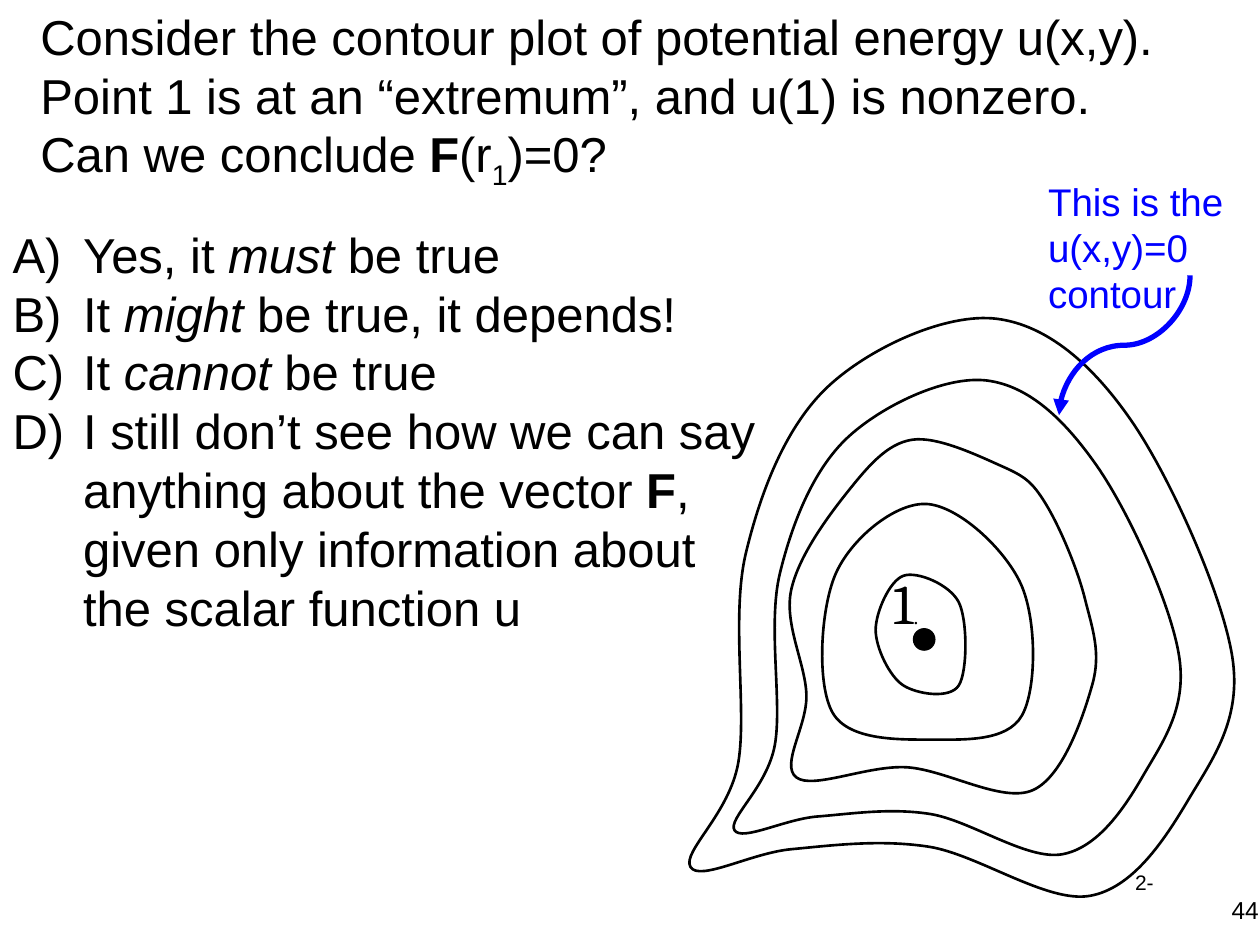
"""Build a quiz slide about a contour plot of potential energy."""
from lxml import etree
from pptx import Presentation
from pptx.dml.color import RGBColor
from pptx.enum.shapes import MSO_CONNECTOR, MSO_SHAPE
from pptx.enum.text import MSO_ANCHOR, MSO_AUTO_SIZE, PP_ALIGN
from pptx.oxml.ns import qn
from pptx.util import Cm, Pt

CURVE = MSO_CONNECTOR.CURVE
OVAL = MSO_SHAPE.OVAL
TOP = MSO_ANCHOR.TOP
FIXED = MSO_AUTO_SIZE.NONE
LEFT, RIGHT = PP_ALIGN.LEFT, PP_ALIGN.RIGHT

HUES = {"ink": "000000", "paper": "FFFFFF", "note": "0000FF"}
INCH = 2.54

ASK = [
    [("Consider the contour plot of potential energy u(x,y).", "")],
    [("Point 1 is at an “extremum”, and u(1) is nonzero.\nCan we conclude ", ""),
     ("F", "bold"), ("(r", ""), ("1", "sub"), (")=0?", "")],
]
CHOICES = [
    [("Yes, it ", ""), ("must", "slant"), (" be true", "")],
    [("It ", ""), ("might", "slant"), (" be true, it depends!", "")],
    [("It ", ""), ("cannot", "slant"), (" be true", "")],
    [("I still don’t see how we can say\nanything about the vector ", ""), ("F", "bold"),
     (",\ngiven only information about\nthe scalar function u", "")],
]
BOXES = [
    ((8.91, 6.85, 0.48, 0.3), [[("2-", "")]], 12, "Arial", "ink", LEFT),
    ((7.76, 7.05, 2.33, 0.52), [[("44", "")]], 14, "Arial", "ink", RIGHT),
    ((6.99, 4.46, 0.56, 0.67), [[("1", ""), (".", "dot")]], 32, "Cambria", "ink", LEFT),
    ((8.22, 1.36, 1.67, 1.21), [[("This is the u(x,y)=0 contour", "")]], 22, "Arial", "note", LEFT),
]
# Each ring is a smooth closed curve through points in hundredths of an inch
OUTER = [(592, 439), (586, 605), (548, 688), (628, 674), (737, 672), (865, 711),
         (943, 635), (978, 521), (898, 334), (791, 253), (657, 307)]
RINGS = [
    (None, OUTER),
    ("paper", [(round(0.82 * x + 134), round(0.82 * y + 95)) for x, y in OUTER]),
    ("paper", [(628, 468), (640, 551), (632, 617), (720, 609), (820, 627), (867, 543),
               (861, 475), (830, 400), (795, 370), (724, 349), (673, 390)]),
    ("paper", [(663, 456), (661, 566), (739, 587), (811, 568), (810, 463), (735, 400)]),
    ("paper", [(717, 457), (695, 500), (717, 544), (761, 544), (761, 478)]),
]


def hue(name):
    return RGBColor.from_string(HUES[name])


def span(*sizes):
    return [Cm(size * INCH) for size in sizes]


def place(shape, box):
    shape.left, shape.top, shape.width, shape.height = span(*box)


def write(frame, paras, size, face, tint, align=LEFT):
    frame.word_wrap, frame.auto_size, frame.vertical_anchor = True, FIXED, TOP
    for num, runs in enumerate(paras):
        para = frame.add_paragraph() if num else frame.paragraphs[0]
        para.alignment, para.space_before = align, Pt(0)
        for text, mark in runs:
            for row, part in enumerate(text.split("\n")):
                if row:
                    para.add_line_break()
                run = para.add_run()
                run.text = part
                font = run.font
                font.size = Pt(12 if mark == "dot" else size)
                font.name = "Times New Roman" if mark == "dot" else face
                font.bold, font.italic = mark == "bold", mark == "slant"
                font.color.rgb = hue(tint)
                if mark == "sub":
                    run._r.get_or_add_rPr().set("baseline", "-25000")


def letter(frame):
    step = Cm(0.56 * INCH)
    for para in frame.paragraphs:
        props = para._p.get_or_add_pPr()
        props.set("marL", str(step))
        props.set("indent", str(-step))
        etree.SubElement(props, qn("a:buFont"), typeface="+mj-lt")
        etree.SubElement(props, qn("a:buAutoNum"), type="alphaUcParenR")


def paint(shape, fill, width):
    shape.shadow.inherit = False
    if fill:
        shape.fill.solid()
        shape.fill.fore_color.rgb = hue(fill)
    else:
        shape.fill.background()
    shape.line.color.rgb = hue("ink")
    shape.line.width = Pt(width)


def smooth(points):
    count, trail = len(points), []
    for pos, here in enumerate(points):
        last = points[pos - 1]
        goal, after = (points[(pos + step) % count] for step in (1, 2))
        trail += [
            tuple(h + (g - p) / 6 for h, g, p in zip(here, goal, last)),
            tuple(g - (a - h) / 6 for g, a, h in zip(goal, after, here)),
            goal,
        ]
    return trail


def ring(shapes, fill, points):
    maker = shapes.build_freeform(*points[0], scale=Cm(INCH) / 100)
    maker.add_line_segments(smooth(points), close=True)
    shape = maker.convert_to_shape()
    legs = list(shape._element.iter(qn("a:lnTo")))
    for pos in range(0, len(points) * 3, 3):
        bend = etree.Element(qn("a:cubicBezTo"))
        legs[pos].addprevious(bend)
        for leg in legs[pos:pos + 3]:
            bend.append(leg[0])
            leg.getparent().remove(leg)
    paint(shape, fill, 1.5)


def arrow(shapes):
    link = shapes.add_connector(CURVE, *span(8.37, 2.22, 9.48, 3.26))
    link.line.color.rgb = hue("note")
    link.line.width = Pt(3)
    props = link._element.spPr
    props.find(qn("a:xfrm")).set("rot", "5400000")
    etree.SubElement(props.find(qn("a:ln")), qn("a:tailEnd"), type="triangle")
    etree.SubElement(props, qn("a:effectLst"))


def main():
    deck = Presentation()
    deck.slide_width, deck.slide_height = span(10, 7.5)
    slide = deck.slides.add_slide(deck.slide_layouts[1])
    shapes = slide.shapes
    title, body = shapes.title, slide.placeholders[1]
    place(title, (0.22, 0, 9.78, 1.51))
    write(title.text_frame, ASK, 28, "Arial", "ink")
    place(body, (0, 1.73, 7.41, 3.87))
    write(body.text_frame, CHOICES, 28, "Arial", "ink")
    letter(body.text_frame)
    for fill, points in RINGS:
        ring(shapes, fill, points)
    for box, *style in BOXES:
        write(shapes.add_textbox(*span(*box)).text_frame, *style)
    paint(shapes.add_shape(OVAL, *span(7.25, 4.99, 0.17, 0.17)), "ink", 0.75)
    arrow(shapes)
    deck.save("out.pptx")


if __name__ == "__main__":
    main()
